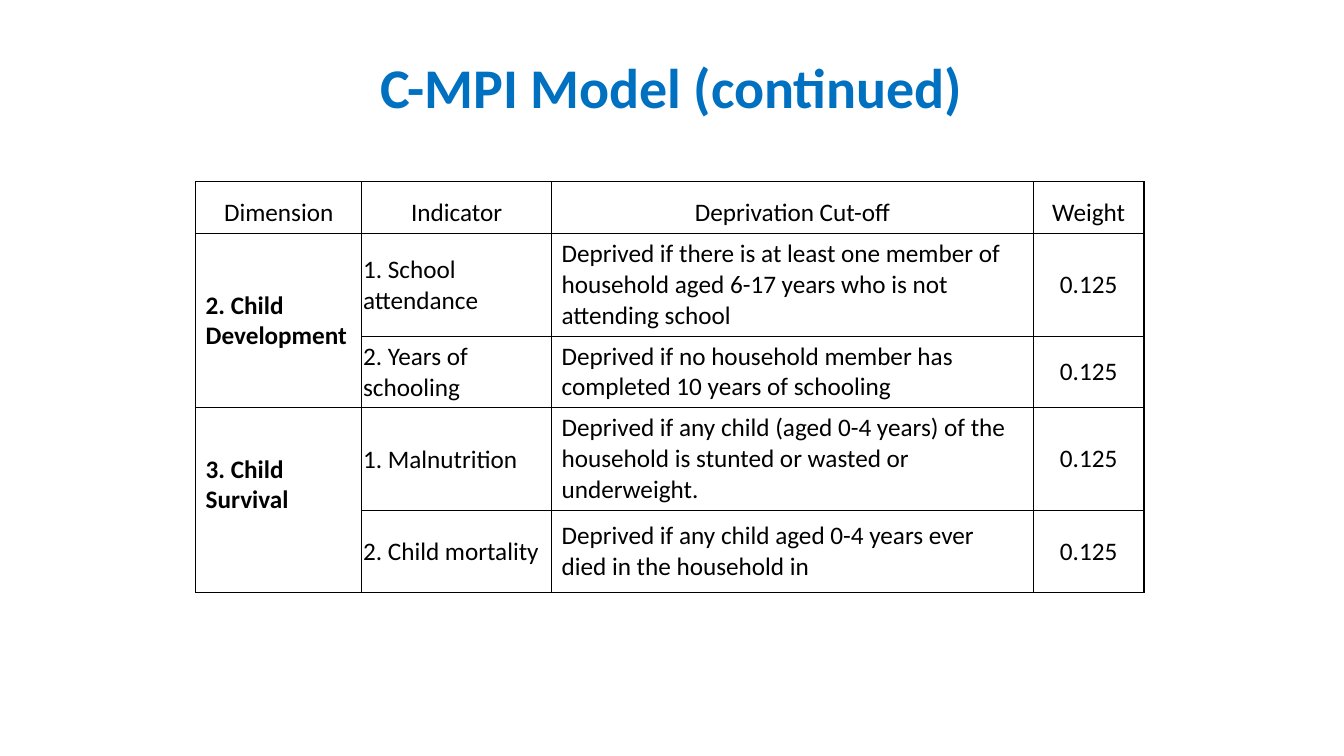
from dataclasses import dataclass

import pptx
import pptx.dml.color
import pptx.enum.text
import pptx.oxml
import pptx.oxml.ns
import pptx.util
from pptx.util import Cm

TITLE = "C-MPI Model (continued)"
HEADINGS = ["Dimension", "Indicator", "Deprivation Cut-off", "Weight"]
DIMENSIONS = {
    "2. Child Development": [
        ("1. School attendance",
         "Deprived if there is at least one member of household aged 6-17 years "
         "who is not attending school", "0.125"),
        ("2. Years of schooling",
         "Deprived if no household member has completed 10 years of schooling", "0.125"),
    ],
    "3. Child Survival": [
        ("1. Malnutrition",
         "Deprived if any child (aged 0-4 years) of the household is stunted or "
         "wasted or underweight.", "0.125"),
        ("2. Child mortality",
         "Deprived if any child aged 0-4 years ever died in the household in", "0.125"),
    ],
}
COLUMN_WIDTHS = [Cm(4.19), Cm(4.78), Cm(12.14), Cm(2.79)]
ROW_HEIGHTS = [Cm(1.32), Cm(2.58), Cm(1.8), Cm(2.58), Cm(2.08)]
LEFT = Cm(4.93)
TABLE_TOP = Cm(4.57)
BOTTOM_MARGINS = {"3. Child Survival": Cm(0.9)}


@dataclass(frozen=True)
class Theme:
    font: str = "Calibri"
    title_size: int = 40
    body_size: int = 18
    title: str = "0070C0"
    ink: str = "000000"
    paper: str = "FFFFFF"
    border_width: int = 1


THEME = Theme()
ALIGN = pptx.enum.text.PP_ALIGN
ANCHOR = pptx.enum.text.MSO_ANCHOR


def rgb(code):
    return pptx.dml.color.RGBColor.from_string(code)


def style(paragraph, size, color, bold, align):
    paragraph.alignment = align
    paragraph.font.name = THEME.font
    paragraph.font.size = pptx.util.Pt(size)
    paragraph.font.bold = bold
    paragraph.font.color.rgb = rgb(color)


def add_borders(cell):
    """Draw all four sides; borders must come before the fill in the XML."""
    properties = cell._tc.get_or_add_tcPr()
    width = pptx.util.Pt(THEME.border_width)
    for position, side in enumerate(("lnL", "lnR", "lnT", "lnB")):
        properties.insert(position, pptx.oxml.parse_xml(
            f'<a:{side} {pptx.oxml.ns.nsdecls("a")} w="{width}"><a:solidFill>'
            f'<a:srgbClr val="{THEME.ink}"/></a:solidFill></a:{side}>'))


def write(cell, text, align=ALIGN.LEFT, bold=False, anchor=ANCHOR.MIDDLE):
    cell.text = text
    cell.vertical_anchor = anchor
    style(cell.text_frame.paragraphs[0], THEME.body_size, THEME.ink, bold, align)


def add_title(slide):
    title = slide.shapes.title
    title.left, title.top, title.width, title.height = LEFT, Cm(0.43), Cm(24), Cm(2.74)
    title.text = TITLE
    title.text_frame.vertical_anchor = ANCHOR.BOTTOM
    heading = title.text_frame.paragraphs[0]
    heading.line_spacing = 0.9
    style(heading, THEME.title_size, THEME.title, True, ALIGN.CENTER)


def add_model(slide):
    model = slide.shapes.add_table(
        len(ROW_HEIGHTS), len(COLUMN_WIDTHS), LEFT, TABLE_TOP,
        sum(COLUMN_WIDTHS), sum(ROW_HEIGHTS)).table
    model.first_row = model.horz_banding = False
    for column, width in zip(model.columns, COLUMN_WIDTHS):
        column.width = width
    for row, height in zip(model.rows, ROW_HEIGHTS):
        row.height = height
    for cell in model.iter_cells():
        cell.fill.solid()
        cell.fill.fore_color.rgb = rgb(THEME.paper)
        add_borders(cell)

    for column, heading in enumerate(HEADINGS):
        write(model.cell(0, column), heading, ALIGN.CENTER, anchor=ANCHOR.BOTTOM)

    row = 1
    for dimension, indicators in DIMENSIONS.items():
        dimension_cell = model.cell(row, 0)
        dimension_cell.merge(model.cell(row + len(indicators) - 1, 0))
        write(dimension_cell, dimension, bold=True)
        if dimension in BOTTOM_MARGINS:
            dimension_cell.margin_bottom = BOTTOM_MARGINS[dimension]
        for indicator, cutoff, weight in indicators:
            indicator_cell = model.cell(row, 1)
            write(indicator_cell, indicator)
            indicator_cell.margin_left = indicator_cell.margin_right = Cm(0.03)
            indicator_cell.margin_top, indicator_cell.margin_bottom = Cm(0.03), 0
            write(model.cell(row, 2), cutoff)
            write(model.cell(row, 3), weight, ALIGN.CENTER)
            row += 1


def main():
    deck = pptx.Presentation()
    deck.slide_width, deck.slide_height = Cm(33.87), Cm(19.05)
    slide = deck.slides.add_slide(deck.slide_layouts[5])
    add_title(slide)
    add_model(slide)
    deck.save("out.pptx")


if __name__ == "__main__":
    main()
